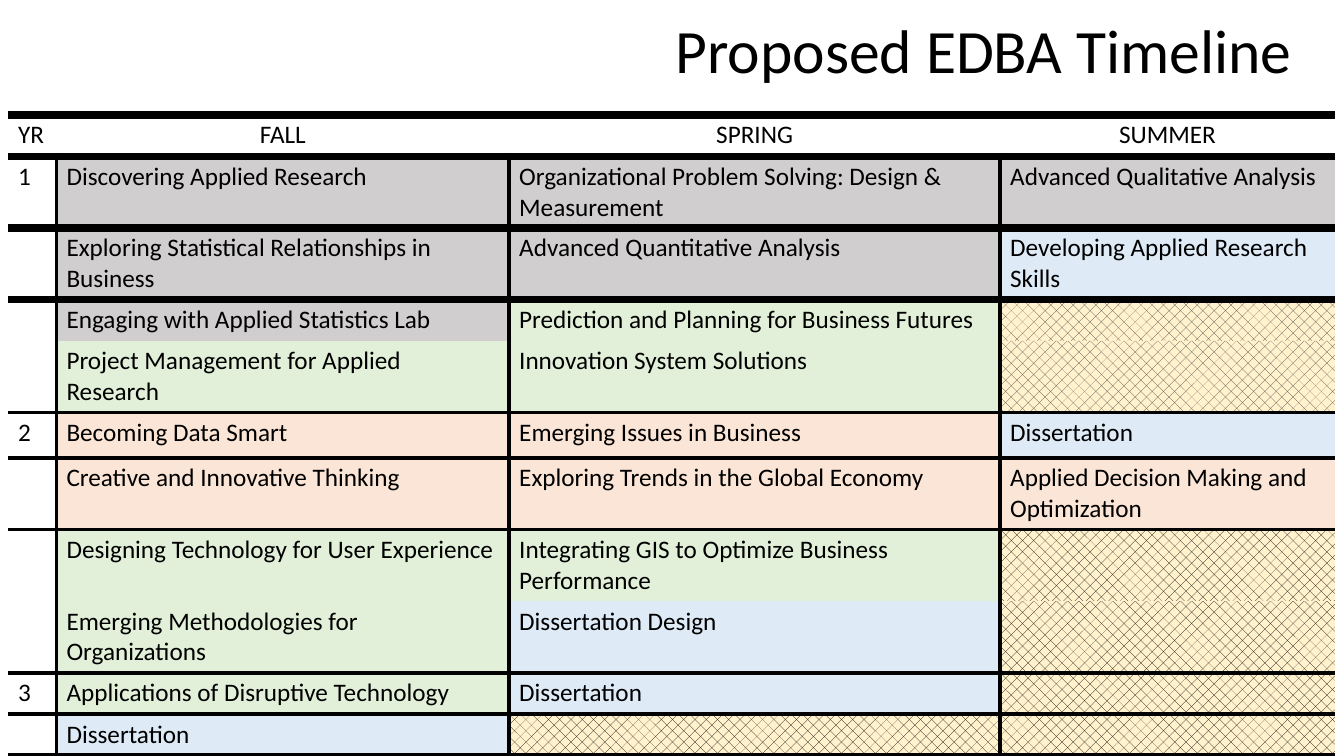
from lxml import etree
from pptx import Presentation
from pptx.dml.color import RGBColor
from pptx.enum.dml import MSO_PATTERN
from pptx.enum.text import MSO_ANCHOR, PP_ALIGN
from pptx.oxml.ns import qn
from pptx.util import Emu, Pt

CENTER, LEFT = PP_ALIGN.CENTER, PP_ALIGN.LEFT
MIDDLE = MSO_ANCHOR.MIDDLE
HATCH = MSO_PATTERN.PERCENT_25
EMU_PER_PX = 9144
EMU_PER_PT = 12700
NO_GRID_STYLE = "{2D5ABB26-0587-4C30-8999-92F81FD0307C}"

BLACK = "000000"
DARK = "404040"
CREAM = "FFF2CC"
GRAY, GREEN, PEACH, BLUE = "D0CECE", "E2F0D9", "FBE5D6", "DEEBF7"

COLUMN_WIDTHS = [48, 449, 487, 332]
ROW_HEIGHTS = [41, 71, 71, 41, 71, 45, 71, 71, 71, 41, 41]
ROW_RULES = {0: 6, 1: 6, 2: 6, 5: 3, 6: 3, 9: 3, 10: 3, 11: 3}
COLUMN_RULES = {1: 3, 2: 3}

DARK_HATCH = ("", (HATCH, DARK))
BLACK_HATCH = ("", (HATCH, BLACK))

TERMS = ["YR", "FALL", "SPRING", "SUMMER"]
COURSES = [
    ("1", ("Discovering Applied Research", GRAY),
     ("Organizational Problem Solving: Design & Measurement", GRAY),
     ("Advanced Qualitative Analysis", GRAY)),
    ("", ("Exploring Statistical Relationships in Business", GRAY),
     ("Advanced Quantitative Analysis", GRAY),
     ("Developing Applied Research Skills", BLUE)),
    ("", ("Engaging with Applied Statistics Lab", GRAY),
     ("Prediction and Planning for Business Futures", GREEN), DARK_HATCH),
    ("", ("Project Management for Applied Research", GREEN),
     ("Innovation System Solutions", GREEN), DARK_HATCH),
    ("2", ("Becoming Data Smart", PEACH),
     ("Emerging Issues in Business", PEACH), ("Dissertation", BLUE)),
    ("", ("Creative and Innovative Thinking", PEACH),
     ("Exploring Trends in the Global Economy", PEACH),
     ("Applied Decision Making and Optimization", PEACH)),
    ("", ("Designing Technology for User Experience", GREEN),
     ("Integrating GIS to Optimize Business Performance", GREEN), BLACK_HATCH),
    ("", ("Emerging Methodologies for Organizations", GREEN),
     ("Dissertation Design", BLUE), BLACK_HATCH),
    ("3", ("Applications of Disruptive Technology", GREEN),
     ("Dissertation", BLUE), BLACK_HATCH),
    ("", ("Dissertation", BLUE), BLACK_HATCH, BLACK_HATCH),
]


def px(length):
    return Emu(length * EMU_PER_PX)


def color(hex_value):
    return RGBColor.from_string(hex_value)


def apply(target, values):
    for name, value in values.items():
        setattr(target, name, value)


def write(paragraph, words, size, align):
    paragraph.text = words
    paragraph.alignment = align
    apply(paragraph.font, {"name": "Calibri", "size": Pt(size)})
    paragraph.font.color.rgb = color(BLACK)


def add_title(slide, words):
    title = slide.shapes.add_textbox(px(401), px(-19), px(1150), px(145))
    apply(title.text_frame, {"word_wrap": True, "vertical_anchor": MIDDLE})
    heading = title.text_frame.paragraphs[0]
    write(heading, words, 44, CENTER)
    heading.line_spacing = 0.9


def rule_cell(cell, row, column):
    verticals = COLUMN_RULES if row else {}
    widths = {
        "a:lnL": verticals.get(column),
        "a:lnR": verticals.get(column + 1),
        "a:lnT": ROW_RULES.get(row),
        "a:lnB": ROW_RULES.get(row + 1),
    }
    properties = cell._tc.get_or_add_tcPr()
    for side, width in widths.items():
        if width:
            line = etree.SubElement(properties, qn(side), w=str(width * EMU_PER_PT))
            ink = etree.SubElement(line, qn("a:solidFill"))
            etree.SubElement(ink, qn("a:srgbClr"), val=BLACK)


def fill_cell(cell, paint):
    if paint is None:
        cell.fill.background()
    elif isinstance(paint, str):
        cell.fill.solid()
        cell.fill.fore_color.rgb = color(paint)
    else:
        pattern, ink = paint
        cell.fill.patterned()
        cell.fill.pattern = pattern
        cell.fill.fore_color.rgb = color(ink)
        cell.fill.back_color.rgb = color(CREAM)


def add_timeline(slide):
    entries = [[(term, None) for term in TERMS]]
    entries += [[(year, None), *terms] for year, *terms in COURSES]
    frame = slide.shapes.add_table(
        len(entries), len(TERMS), px(8), px(114),
        px(sum(COLUMN_WIDTHS)), px(sum(ROW_HEIGHTS)))
    timeline = frame.table
    apply(timeline, {"first_row": False, "horz_banding": False})
    timeline._tbl.tblPr.find(qn("a:tableStyleId")).text = NO_GRID_STYLE
    for column, width in zip(timeline.columns, COLUMN_WIDTHS):
        column.width = px(width)
    for row, height in zip(timeline.rows, ROW_HEIGHTS):
        row.height = px(height)
    for row, line in enumerate(entries):
        for column, (words, paint) in enumerate(line):
            cell = timeline.cell(row, column)
            align = CENTER if row == 0 and column else LEFT
            write(cell.text_frame.paragraphs[0], words, 18, align)
            rule_cell(cell, row, column)
            fill_cell(cell, paint)


def main():
    deck = Presentation()
    apply(deck, {"slide_width": px(1333), "slide_height": px(750)})
    slide = deck.slides.add_slide(deck.slide_layouts[6])
    add_timeline(slide)
    add_title(slide, "Proposed EDBA Timeline")
    deck.save("out.pptx")


if __name__ == "__main__":
    main()
